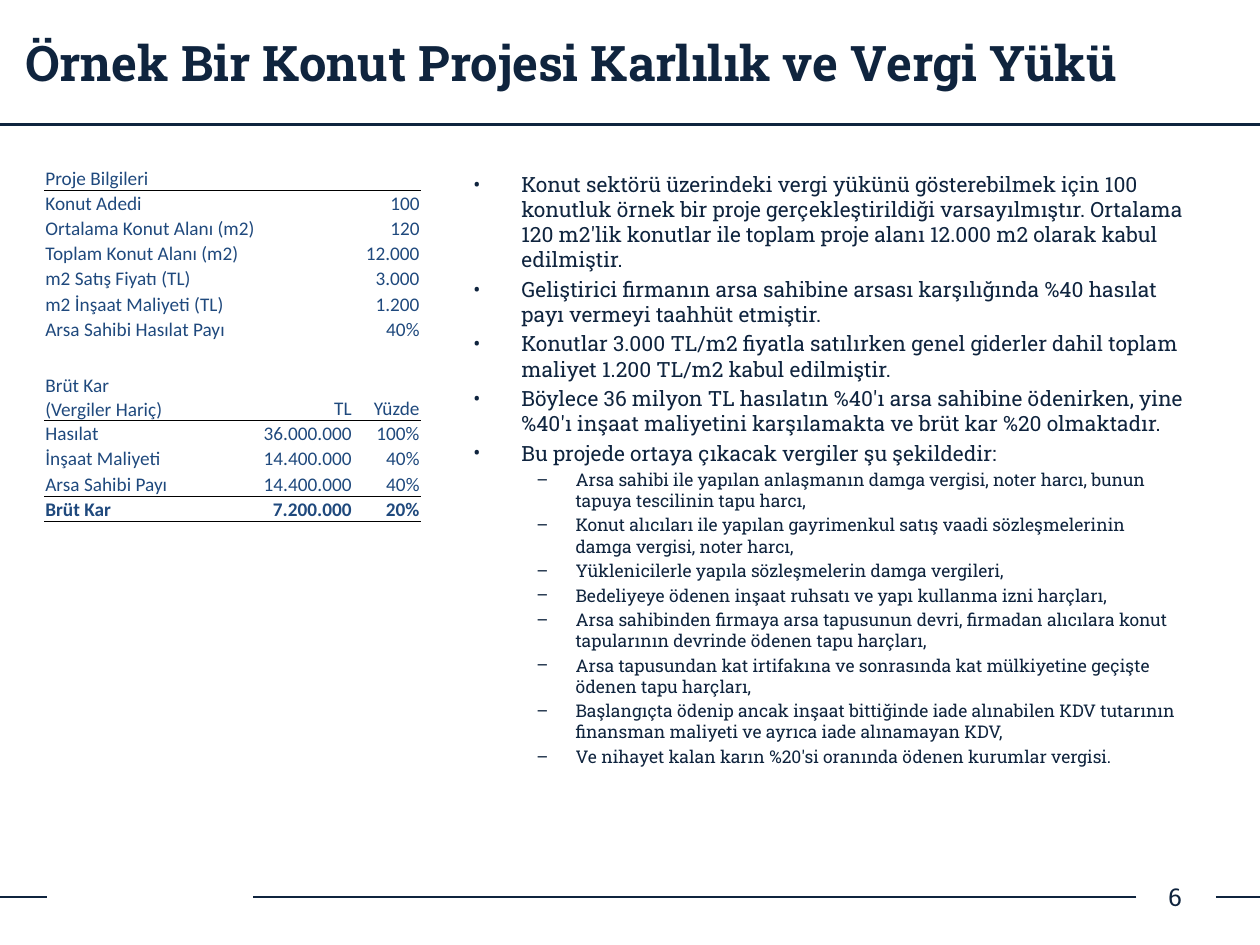
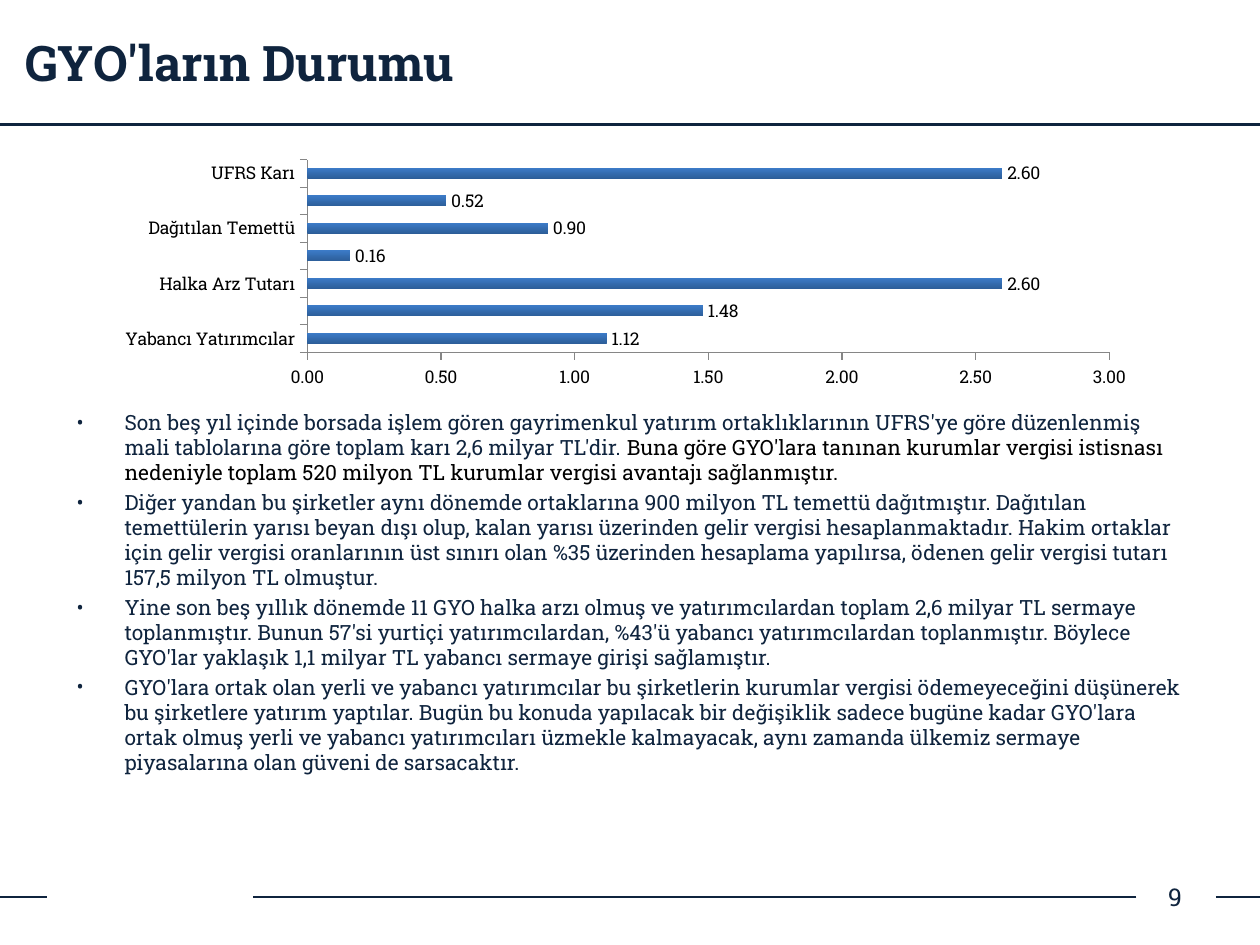
from lxml.etree import SubElement
from pptx import Presentation
from pptx.chart.data import CategoryChartData
from pptx.dml.color import RGBColor
from pptx.enum.chart import XL_CHART_TYPE, XL_LABEL_POSITION, XL_TICK_MARK
from pptx.enum.shapes import MSO_CONNECTOR
from pptx.enum.text import MSO_ANCHOR, PP_ALIGN
from pptx.oxml import parse_xml
from pptx.oxml.ns import nsdecls, qn
from pptx.util import Inches, Pt

W, H = Inches(10), Inches(7.5)
COL, ROW = W / 100, H / 100
NAVY = RGBColor(0x0F, 0x24, 0x3E)
BLUE = RGBColor(0x1F, 0x49, 0x7D)
BLACK = RGBColor(0, 0, 0)
GREY = RGBColor(0x86, 0x86, 0x86)
BAR_DARK = RGBColor(0x2C, 0x5D, 0x98)
BAR_LIGHT = RGBColor(0x3C, 0x7B, 0xC7)
SLAB, SANS = "Roboto Slab", "Calibri"
NO_STYLE = "{2D5ABB26-0587-4C30-8999-92F81FD0307C}"
BULLETS = [("•", 0.38, -0.38, 12), ("–", 0.81, -0.31, 10)]
TITLE_BOX = (0, 0, 100, 13.2)
NUMBER_BOX = (90.9, 92.27, 4.7, 5.33)
FOOT_Y = 94.93
RULES = [(90.2, 20.1, FOOT_Y, 1.5), (0, 3.7, FOOT_Y, 1.5),
         (96.5, 100, FOOT_Y, 1.5), (100, 0, 13.2, 2)]

PROJECT = [
    ("Proje Bilgileri", ""),
    ("Konut Adedi", "100"),
    ("Ortalama Konut Alanı (m2)", "120"),
    ("Toplam Konut Alanı (m2)", "12.000"),
    ("m2 Satış Fiyatı (TL)", "3.000"),
    ("m2 İnşaat Maliyeti (TL)", "1.200"),
    ("Arsa Sahibi Hasılat Payı", "40%"),
]
PROFIT = [
    ("Brüt Kar\n(Vergiler Hariç)", "TL", "Yüzde"),
    ("Hasılat", "36.000.000", "100%"),
    ("İnşaat Maliyeti", "14.400.000", "40%"),
    ("Arsa Sahibi Payı", "14.400.000", "40%"),
    ("Brüt Kar", "7.200.000", "20%"),
]
ASSUMPTIONS = [
    "Konut sektörü üzerindeki vergi yükünü gösterebilmek için 100 konutluk örnek bir proje "
    "gerçekleştirildiği varsayılmıştır. Ortalama 120 m2'lik konutlar ile toplam proje alanı "
    "12.000 m2 olarak kabul edilmiştir.",
    "Geliştirici firmanın arsa sahibine arsası karşılığında %40 hasılat payı vermeyi taahhüt "
    "etmiştir.",
    "Konutlar 3.000 TL/m2 fiyatla satılırken genel giderler dahil toplam maliyet 1.200 TL/m2 "
    "kabul edilmiştir.",
    "Böylece 36 milyon TL hasılatın %40'ı arsa sahibine ödenirken, yine %40'ı inşaat maliyetini "
    "karşılamakta ve brüt kar %20 olmaktadır.",
    "Bu projede ortaya çıkacak vergiler şu şekildedir:",
]
TAXES = [
    "Arsa sahibi ile yapılan anlaşmanın damga vergisi, noter harcı, bunun tapuya tescilinin "
    "tapu harcı,",
    "Konut alıcıları ile yapılan gayrimenkul satış vaadi sözleşmelerinin damga vergisi, noter "
    "harcı,",
    "Yüklenicilerle yapıla sözleşmelerin damga vergileri,",
    "Bedeliyeye ödenen inşaat ruhsatı ve yapı kullanma izni harçları,",
    "Arsa sahibinden firmaya arsa tapusunun devri, firmadan alıcılara konut tapularının "
    "devrinde ödenen tapu harçları,",
    "Arsa tapusundan kat irtifakına ve sonrasında kat mülkiyetine geçişte ödenen tapu harçları,",
    "Başlangıçta ödenip ancak inşaat bittiğinde iade alınabilen KDV tutarının finansman "
    "maliyeti ve ayrıca iade alınamayan KDV,",
    "Ve nihayet kalan karın %20'si oranında ödenen kurumlar vergisi.",
]
TRUSTS = [
    ("Son beş yıl içinde borsada işlem gören gayrimenkul yatırım ortaklıklarının UFRS'ye göre "
     "düzenlenmiş mali tablolarına göre toplam karı 2,6 milyar TL'dir. ",
     "Buna göre GYO'lara tanınan kurumlar vergisi istisnası nedeniyle toplam 520 milyon TL "
     "kurumlar vergisi avantajı sağlanmıştır."),
    ("Diğer yandan bu şirketler aynı dönemde ortaklarına 900 milyon TL temettü dağıtmıştır. "
     "Dağıtılan temettülerin yarısı beyan dışı olup, kalan yarısı üzerinden gelir vergisi "
     "hesaplanmaktadır. Hakim ortaklar için gelir vergisi oranlarının üst sınırı olan %35 "
     "üzerinden hesaplama yapılırsa, ödenen gelir vergisi tutarı 157,5 milyon TL olmuştur.",),
    ("Yine son beş yıllık dönemde 11 GYO halka arzı olmuş ve yatırımcılardan toplam 2,6 milyar "
     "TL sermaye toplanmıştır. Bunun 57'si yurtiçi yatırımcılardan, %43'ü yabancı "
     "yatırımcılardan toplanmıştır. Böylece GYO'lar yaklaşık 1,1 milyar TL yabancı sermaye "
     "girişi sağlamıştır.",),
    ("GYO'lara ortak olan yerli ve yabancı yatırımcılar bu şirketlerin kurumlar vergisi "
     "ödemeyeceğini düşünerek bu şirketlere yatırım yaptılar. Bugün bu konuda yapılacak bir "
     "değişiklik sadece bugüne kadar GYO'lara ortak olmuş yerli ve yabancı yatırımcıları "
     "üzmekle kalmayacak, aynı zamanda ülkemiz sermaye piyasalarına olan güveni de "
     "sarsacaktır.",),
]
AMOUNTS = [
    ("Yabancı Yatırımcılar", 1.12), ("", 1.48), ("Halka Arz Tutarı", 2.6), ("", 0.16),
    ("Dağıtılan Temettü", 0.9), ("", 0.52), ("UFRS Karı", 2.6),
]


def place(box):
    """Turn a box in grid columns and rows into slide lengths."""
    x, y, w, h = box
    return int(x * COL), int(y * ROW), int(w * COL), int(h * ROW)


def style(font, size, color, name=SLAB, bold=False):
    """Set the size, colour, face and weight of a font."""
    font.size, font.name, font.bold = Pt(size), name, bold
    font.color.rgb = color


def add_text(s, box, text="", size=12, bold=False, anchor=MSO_ANCHOR.TOP, align=PP_ALIGN.LEFT):
    """Add a wrapping text box and return its text frame."""
    tf = s.shapes.add_textbox(*place(box)).text_frame
    tf.word_wrap, tf.vertical_anchor = True, anchor
    if text:
        tf.text = text
        p = tf.paragraphs[0]
        p.alignment = align
        style(p.runs[0].font, size, NAVY, bold=bold)
    return tf


def add_rule(s, x1, x2, y, width):
    """Draw one horizontal navy rule."""
    ln = s.shapes.add_connector(MSO_CONNECTOR.STRAIGHT, int(x1 * COL), int(y * ROW),
                                int(x2 * COL), int(y * ROW))
    ln.line.color.rgb, ln.line.width = NAVY, Pt(width)
    SubElement(ln._element.spPr, qn("a:effectLst"))


def add_frame(prs, title, number):
    """Add a blank slide with the shared rules, title and page number."""
    s = prs.slides.add_slide(prs.slide_layouts[6])
    for rule in RULES:
        add_rule(s, *rule)
    tf = add_text(s, TITLE_BOX, title, 28, True, MSO_ANCHOR.MIDDLE)
    tf.margin_left = Inches(0.2)
    add_text(s, NUMBER_BOX, number, 14, anchor=MSO_ANCHOR.MIDDLE, align=PP_ALIGN.CENTER)
    return s


def add_bullets(s, box, items):
    """Fill a box with (level, runs) bullets; a second run is black."""
    tf = add_text(s, box)
    for i, (level, texts) in enumerate(items):
        p = tf.add_paragraph() if i else tf.paragraphs[0]
        mark, left, hang, size = BULLETS[level]
        p.level = level
        pPr = p._p.get_or_add_pPr()
        pPr.set("marL", str(Inches(left)))
        pPr.set("indent", str(Inches(hang)))
        SubElement(pPr, qn("a:buFont"), typeface=SLAB)
        SubElement(pPr, qn("a:buChar"), char=mark)
        p.space_before = Pt(0.2 * size if i else 0)
        for text, color in zip(texts, (NAVY, BLACK)):
            r = p.add_run()
            r.text = text
            style(r.font, size, color)


def underline(cell):
    """Give a cell a thin black bottom border."""
    cell._tc.get_or_add_tcPr().insert(0, parse_xml(
        f'<a:lnB {nsdecls("a")} w="6350"><a:solidFill><a:srgbClr val="{BLACK}"/>'
        '</a:solidFill></a:lnB>'))


def fill_cell(cell, text, align, bold):
    """Write one table cell with its margins and font."""
    cell.fill.background()
    cell.vertical_anchor = MSO_ANCHOR.BOTTOM
    cell.margin_left = cell.margin_right = cell.margin_top = Inches(0.01)
    cell.margin_bottom = 0
    cell.text_frame.text = text
    for p in cell.text_frame.paragraphs:
        p.alignment = align
        for r in p.runs:
            style(r.font, 11, BLUE, SANS, bold)
        if not p.runs:
            SubElement(p._p, qn("a:endParaRPr"), sz="1100")


def add_figures(s, box, rows, shares, lines, head=1, total=None):
    """Add a table with column shares, a head of given rows and underlined rows."""
    x, y, w, h = place(box)
    table = s.shapes.add_table(len(rows), len(shares), x, y, w, h).table
    table.first_row = table.horz_banding = False
    table._tbl.tblPr[0].text = NO_STYLE
    unit = h / (len(rows) - 1 + head)
    for column, share in zip(table.columns, shares):
        column.width = int(w * share)
    for i, row in enumerate(rows):
        table.rows[i].height = int(unit * (1 if i else head))
        for j, text in enumerate(row):
            cell = table.cell(i, j)
            fill_cell(cell, text, PP_ALIGN.RIGHT if j else PP_ALIGN.LEFT, i == total)
            if i in lines:
                underline(cell)


def add_amounts(s, box, amounts):
    """Add the bar chart of amounts with value labels."""
    names, values = zip(*amounts)
    data = CategoryChartData(number_format="#,##0.00")
    data.categories = names
    data.add_series("Series 1", values)
    chart = s.shapes.add_chart(XL_CHART_TYPE.BAR_CLUSTERED, *place(box), data).chart
    chart.has_legend = chart.has_title = False
    style(chart.font, 10, BLACK)
    for axis in (chart.category_axis, chart.value_axis):
        axis.has_major_gridlines = False
        axis.major_tick_mark = XL_TICK_MARK.OUTSIDE
        axis.format.line.color.rgb = GREY
    axis = chart.value_axis
    axis.minimum_scale, axis.maximum_scale, axis.major_unit = 0, 3, 0.5
    axis.tick_labels.number_format = "#,##0.00"
    axis.tick_labels.number_format_is_linked = False
    plot = chart.plots[0]
    plot.gap_width, plot.vary_by_categories = 150, False
    plot.has_data_labels = True
    labels = plot.data_labels
    labels.show_value, labels.position = True, XL_LABEL_POSITION.OUTSIDE_END
    labels.number_format, labels.number_format_is_linked = "#,##0.00", False
    fill = plot.series[0].format.fill
    fill.gradient()
    fill.gradient_angle = 90
    for stop, color in zip(fill.gradient_stops, (BAR_DARK, BAR_LIGHT)):
        stop.color.rgb = color


def build_project(prs):
    """Build the slide on the sample housing project."""
    s = add_frame(prs, "Örnek Bir Konut Projesi Karlılık ve Vergi Yükü", "6")
    items = [(0, [t]) for t in ASSUMPTIONS] + [(1, [t]) for t in TAXES]
    add_bullets(s, (36.6, 17.47, 58.4, 71.87), items)
    add_figures(s, (3.5, 17.47, 29.9, 18.67), PROJECT, (0.74, 0.26), {0})
    add_figures(s, (3.5, 39.47, 29.9, 15.73), PROFIT, (0.485, 0.335, 0.18), {0, 3, 4}, 1.9, 4)


def build_trusts(prs):
    """Build the slide on the property investment trusts."""
    s = add_frame(prs, "GYO'ların Durumu", "9")
    add_bullets(s, (5.1, 42.67, 89.9, 46.67), [(0, texts) for texts in TRUSTS])
    add_amounts(s, (8.3, 16.4, 82.7, 25.2), AMOUNTS)


def main():
    """Build and save the presentation."""
    prs = Presentation()
    prs.slide_width, prs.slide_height = W, H
    build_project(prs)
    build_trusts(prs)
    prs.save("out.pptx")


if __name__ == "__main__":
    main()
